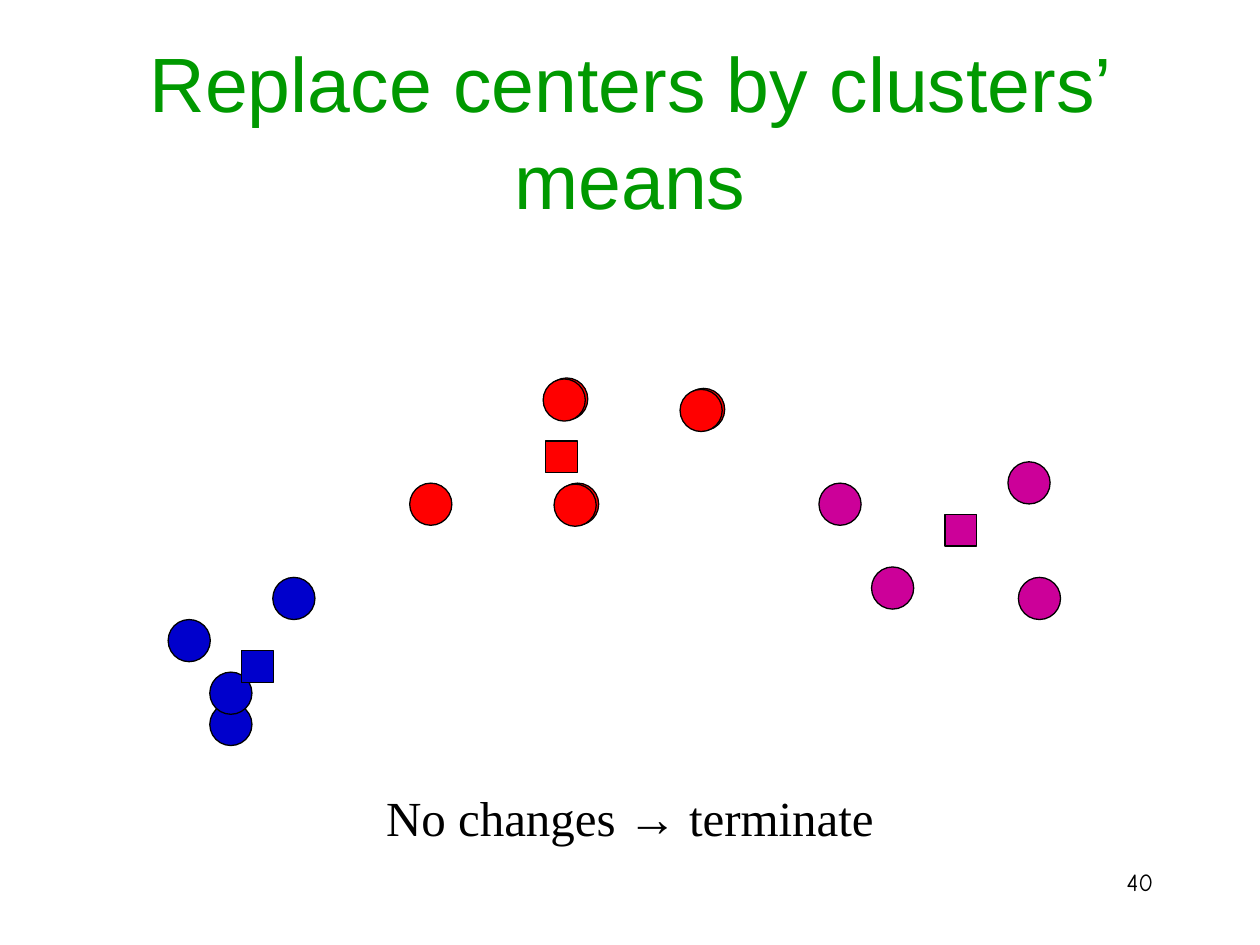
"""Build the slide on the final step of k-means clustering."""
from dataclasses import dataclass

from pptx import Presentation
from pptx.dml.color import RGBColor as Rgb
from pptx.enum.shapes import MSO_SHAPE as Shape
from pptx.enum.text import MSO_ANCHOR as Anchor, PP_ALIGN as Align
from pptx.util import Cm, Pt


@dataclass(frozen=True)
class Theme:
    green: str = "009900"
    black: str = "000000"
    blue: str = "0000CC"
    red: str = "FF0000"
    pink: str = "CC0099"
    title: int = 44
    note: int = 28
    number: int = 14
    line: float = 0.75


theme = Theme()
deck = Presentation()
deck.slide_width, deck.slide_height = Cm(25.4), Cm(19.05)
slide = deck.slides.add_slide(deck.slide_layouts[6])


def add_text(text, box, size, face, color, align):
    frame = slide.shapes.add_textbox(*map(Cm, box)).text_frame
    frame.word_wrap = True
    frame.text = text
    par = frame.paragraphs[0]
    par.alignment = align
    font = par.runs[0].font
    font.name, font.size = face, Pt(size)
    font.color.rgb = Rgb.from_string(color)
    return frame


def add_mark(kind, left, top, size, color):
    mark = slide.shapes.add_shape(kind, Cm(left), Cm(top), Cm(size), Cm(size))
    mark.shadow.inherit = False
    mark.fill.solid()
    mark.fill.fore_color.rgb = Rgb.from_string(color)
    mark.line.color.rgb = Rgb.from_string(theme.black)
    mark.line.width = Pt(theme.line)


title = add_text("Replace centers by clusters’ means", (1.9, 0.99, 21.6, 3.18),
                 theme.title, "Arial", theme.green, Align.CENTER)
title.vertical_anchor = Anchor.MIDDLE
title.paragraphs[0].line_spacing = 1.05
add_text("40", (18.2, 17.35, 5.3, 1.27), theme.number, "Comic Neue",
         theme.black, Align.RIGHT)

twins = [(11, 7.62), (13.76, 7.83), (11.22, 9.74)]
groups = [
    (theme.blue, (4.87, 13.12),
     [(4.23, 14.18), (3.39, 12.49), (5.5, 11.64), (4.23, 13.55)]),
    (theme.red, (11, 8.89), twins + [(8.26, 9.74)]),
    (theme.pink, (19.05, 10.37),
     [(20.32, 9.31), (20.53, 11.64), (16.51, 9.74), (17.57, 11.43)]),
]
for color, center, points in groups:
    for left, top in points:
        add_mark(Shape.OVAL, left, top, 0.85, color)
    add_mark(Shape.RECTANGLE, *center, 0.64, color)

add_text("No changes → terminate", (0, 15.75, 25.4, 1.45), theme.note,
         "Times New Roman", theme.black, Align.CENTER)
for left, top in twins:
    add_mark(Shape.OVAL, left - 0.05, top + 0.02, 0.85, theme.red)

deck.save("out.pptx")
